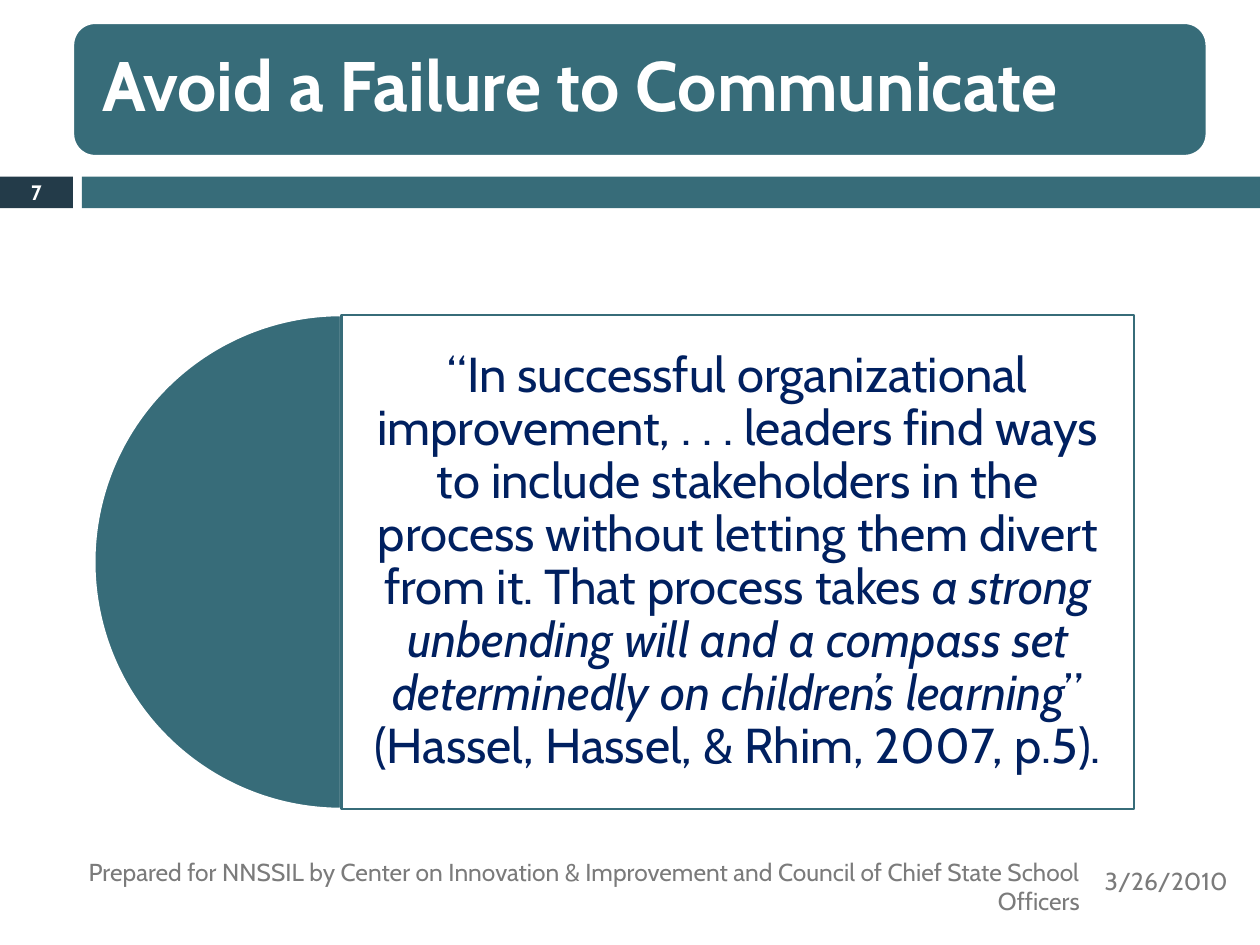
from dataclasses import dataclass
from typing import Optional

from lxml import etree
from pptx import Presentation
from pptx import util as u
from pptx.dml.color import RGBColor
from pptx.enum import shapes, text
from pptx.oxml import ns

TEAL = RGBColor(0x37, 0x6C, 0x79)
SLATE = RGBColor(0x23, 0x3B, 0x49)
NAVY = RGBColor(0x00, 0x20, 0x60)
GRAY = RGBColor(0x7B, 0x7B, 0x7B)
WHITE = RGBColor(0xFF, 0xFF, 0xFF)
FONT = "Cabin"
Kind = shapes.MSO_SHAPE
Align = text.PP_ALIGN


@dataclass(frozen=True)
class Box:
    """Left, top, width and height in centimetres."""
    left: float
    top: float
    width: float
    height: float

    def lengths(self) -> list[u.Length]:
        return [u.Cm(v) for v in (self.left, self.top, self.width, self.height)]


@dataclass(frozen=True)
class Block:
    kind: Kind
    box: Box
    fill: RGBColor
    line: Optional[RGBColor] = None


@dataclass(frozen=True)
class Run:
    words: str
    italic: bool = False


@dataclass(frozen=True)
class Label:
    runs: tuple[Run, ...]
    size: float
    color: RGBColor
    align: Align = Align.LEFT
    bold: bool = False
    inset: Optional[float] = None
    spacing: float = 1.0


def add_block(slide, block: Block):
    s = slide.shapes.add_shape(block.kind, *block.box.lengths())
    s.shadow.inherit = False
    s.fill.solid()
    s.fill.fore_color.rgb = block.fill
    if block.line is None:
        s.line.fill.background()
    else:
        s.line.color.rgb = block.line
        s.line.width = u.Pt(1.5)
    return s


def set_opacity(s, percent: int) -> None:
    color = s.fill._xPr.find(ns.qn("a:solidFill"))[0]
    etree.SubElement(color, ns.qn("a:alpha")).set("val", str(percent * 1000))


def write(s, label: Label) -> None:
    tf = s.text_frame
    tf.word_wrap = True
    tf.vertical_anchor = text.MSO_ANCHOR.MIDDLE
    if label.inset is not None:
        tf.margin_left = tf.margin_right = u.Cm(label.inset)
        tf.margin_top = tf.margin_bottom = u.Cm(label.inset)
    p = tf.paragraphs[0]
    p.alignment = label.align
    p.line_spacing = label.spacing
    for run in label.runs:
        r = p.add_run()
        r.text = run.words
        r.font.name = FONT
        r.font.size = u.Pt(label.size)
        r.font.bold = label.bold
        r.font.italic = run.italic
        r.font.color.rgb = label.color


def add_label(slide, box: Box, label: Label) -> None:
    write(slide.shapes.add_textbox(*box.lengths()), label)


TITLE = Label((Run("Avoid a Failure to Communicate"),), 40, WHITE,
              bold=True, inset=0.43, spacing=0.9)
QUOTE = Label((
    Run("“In successful organizational improvement, . . . leaders find ways to "
        "include stakeholders in the process without letting them divert from it. "
        "That process takes "),
    Run("a strong unbending will and a compass set determinedly on "
        "children’s learning", italic=True),
    Run("” (Hassel, Hassel, & Rhim, 2007, p.5)."),
), 28, NAVY, Align.CENTER, inset=0.3, spacing=0.9)
FOOTER = Label((Run("Prepared for NNSSIL by Center on Innovation & Improvement "
                    "and Council of Chief State School Officers"),),
               14, GRAY, Align.RIGHT)
DATE = Label((Run("3/26/2010"),), 14, GRAY)
NUMBER = Label((Run("7"),), 11.9, WHITE, Align.CENTER, bold=True)


def main() -> None:
    prs = Presentation()
    prs.slide_width, prs.slide_height = u.Cm(25.4), u.Cm(19.05)
    slide = prs.slides.add_slide(prs.slide_layouts[6])

    add_block(slide, Block(Kind.RECTANGLE, Box(0, 3.56, 1.47, 0.64), SLATE))
    add_block(slide, Block(Kind.RECTANGLE, Box(1.65, 3.56, 23.75, 0.64), TEAL))
    add_block(slide, Block(Kind.ROUNDED_RECTANGLE, Box(1.47, 0.46, 22.86, 2.69),
                           TEAL, WHITE))
    add_label(slide, Box(1.63, 0.58, 22.6, 2.44), TITLE)

    half_disc = add_block(slide, Block(Kind.PIE, Box(1.9, 6.35, 9.96, 9.96),
                                       TEAL, WHITE))
    half_disc.adjustments[0] = 54   # 90 degrees
    half_disc.adjustments[1] = 162  # 270 degrees
    panel = add_block(slide, Block(Kind.RECTANGLE, Box(6.88, 6.35, 15.98, 9.96),
                                   WHITE, TEAL))
    set_opacity(panel, 90)
    write(panel, QUOTE)

    add_label(slide, Box(0.43, 17.35, 21.59, 1.02), FOOTER)
    add_label(slide, Box(22.02, 17.15, 3.18, 1.22), DATE)
    add_label(slide, Box(0, 3.53, 1.47, 0.69), NUMBER)
    prs.save("out.pptx")


if __name__ == "__main__":
    main()
